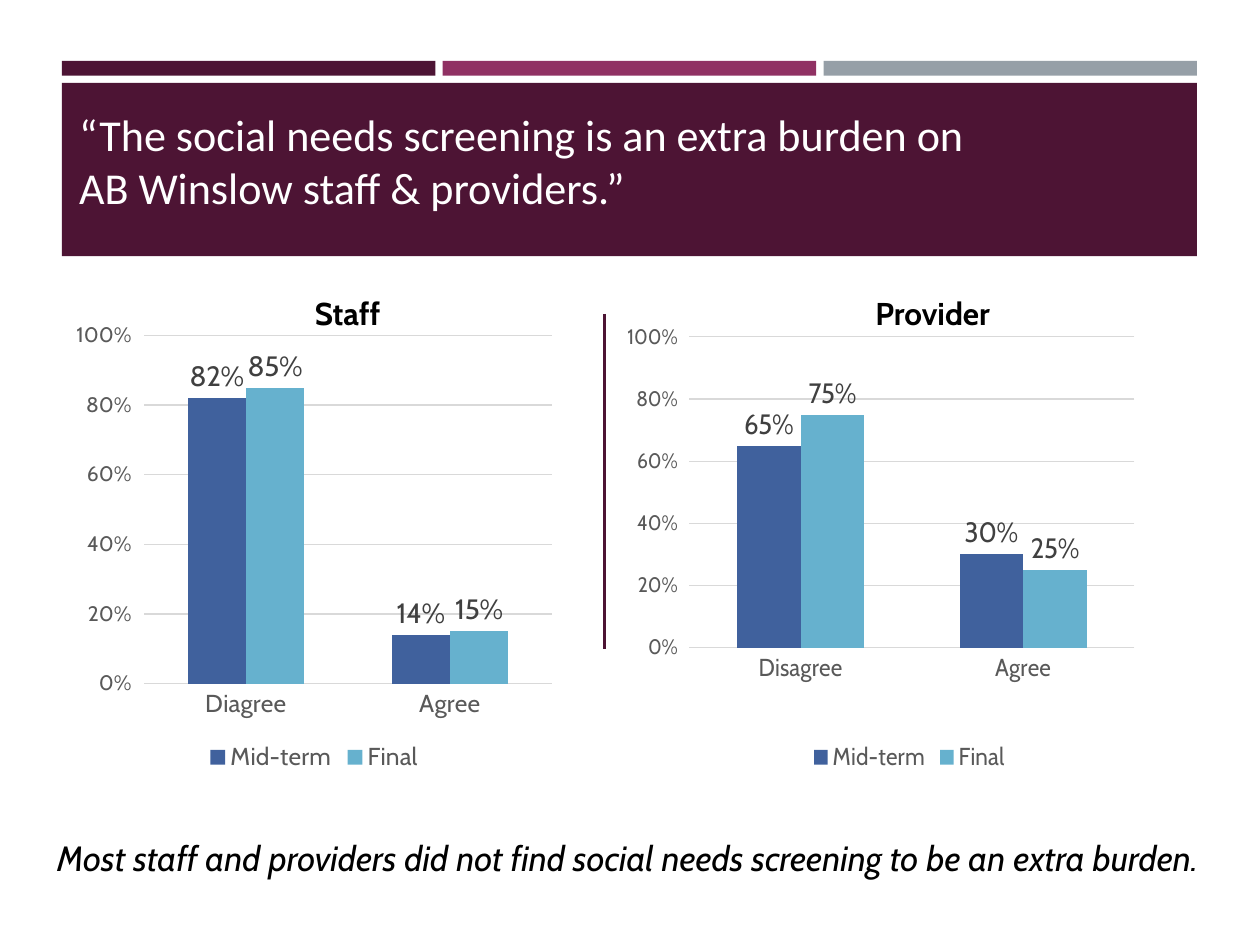
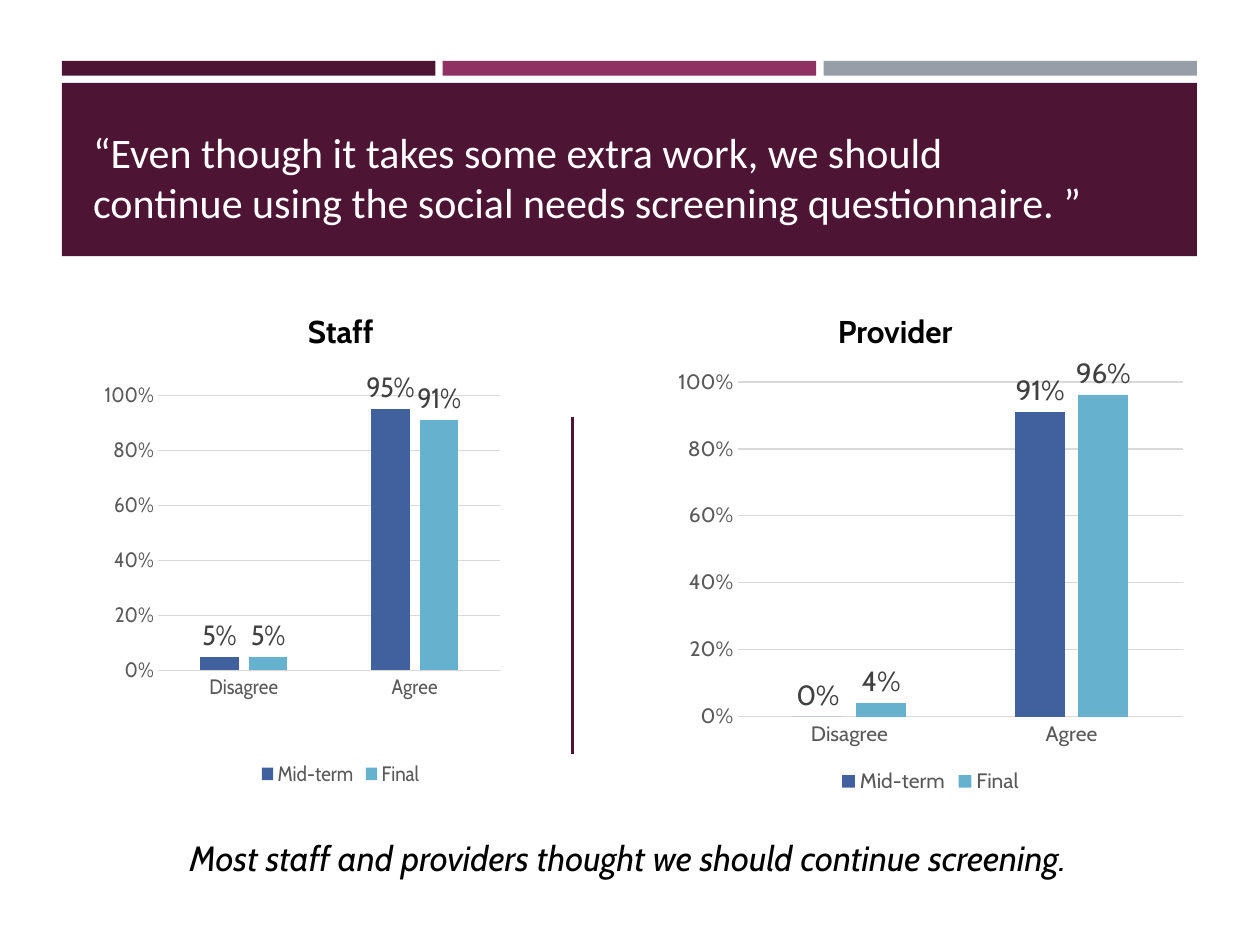
from pptx import Presentation
from pptx.chart.data import CategoryChartData
from pptx.dml.color import RGBColor
from pptx.enum.chart import XL_CHART_TYPE as ChartType
from pptx.enum.chart import XL_LABEL_POSITION as LabelPos
from pptx.enum.chart import XL_LEGEND_POSITION as LegendPos
from pptx.enum.chart import XL_TICK_MARK as Tick
from pptx.enum.shapes import MSO_CONNECTOR as Connector
from pptx.enum.shapes import MSO_SHAPE as Shape
from pptx.enum.text import MSO_ANCHOR as Anchor
from pptx.enum.text import MSO_AUTO_SIZE as AutoSize
from pptx.enum.text import PP_ALIGN as Align
from pptx.oxml.ns import qn
from pptx.util import Pt
from lxml.etree import SubElement

COLORS = {
    "plum": "4D1434", "berry": "903163", "steel": "969FA7",
    "white": "FFFFFF", "black": "000000",
    "midterm": "40619D", "final": "66B1CE",
    "axis": "595959", "label": "404040", "grid": "D9D9D9",
}
BODY_FONT = "Cabin"
TITLE_FONT = "Calibri"

# Header band geometry, in points
BAND_LEFT, BAND_WIDTH, BAND_GAP = 35.4, 648.6, 4.2

# Chart looks, one per slide
OPEN_STYLE = {"category_size": 14, "legend_size": 14, "gap": 150, "overlap": 0,
              "ticks": Tick.OUTSIDE, "baseline": False}
SPACED_STYLE = {"category_size": 12, "legend_size": 12, "gap": 219, "overlap": -27,
                "ticks": Tick.NONE, "baseline": True}


def color(name):
    return RGBColor.from_string(COLORS[name])


def box(left, top, width, height):
    return Pt(left), Pt(top), Pt(width), Pt(height)


def set_font(font, size, color_name, name=BODY_FONT, bold=False, italic=False):
    font.name, font.size = name, Pt(size)
    font.bold, font.italic = bold, italic
    font.color.rgb = color(color_name)


def format_text(frame, align, **font):
    for paragraph in frame.paragraphs:
        paragraph.alignment = align
        for run in paragraph.runs:
            set_font(run.font, **font)


def add_bar(slide, area, color_name):
    bar = slide.shapes.add_shape(Shape.RECTANGLE, *box(*area))
    bar.shadow.inherit = False
    bar.fill.solid()
    bar.fill.fore_color.rgb = color(color_name)
    bar.line.fill.background()
    return bar


def add_header(slide, title, area, size, anchor, insets):
    """Three thin bars, the title band and the title on top of it."""
    bar_width = (BAND_WIDTH - 2 * BAND_GAP) / 3
    for i, name in enumerate(("plum", "berry", "steel")):
        left = BAND_LEFT + i * (bar_width + BAND_GAP)
        add_bar(slide, (left, 34.8, bar_width, 8.4), name)
    band = add_bar(slide, (BAND_LEFT, 47.4, BAND_WIDTH, 99), "plum")

    heading = slide.shapes.title
    heading.left, heading.top, heading.width, heading.height = box(*area)
    band.element.addnext(heading.element)
    frame = heading.text_frame
    frame.text = title
    frame.word_wrap = True
    frame.auto_size = AutoSize.NONE
    frame.vertical_anchor = anchor
    frame.margin_top, frame.margin_bottom = map(Pt, insets)
    format_text(frame, Align.LEFT, size=size, color_name="white", name=TITLE_FONT)


def add_text(slide, text, area, align=Align.CENTER, **font):
    textbox = slide.shapes.add_textbox(*box(*area))
    frame = textbox.text_frame
    frame.word_wrap = True
    frame.text = text
    format_text(frame, align, color_name="black", **font)


def add_group_label(slide, text, area, align=Align.CENTER):
    add_text(slide, text, area, align, size=18, bold=True)


def add_conclusion(slide, text):
    add_text(slide, text, (13, 474.5, 692, 31.5), size=20, italic=True)


def add_divider(slide, x, top, bottom):
    divider = slide.shapes.add_connector(Connector.STRAIGHT, Pt(x), Pt(top), Pt(x), Pt(bottom))
    divider.line.color.rgb = color("plum")
    divider.line.width = Pt(1.75)
    SubElement(divider.element.spPr, qn("a:effectLst"))


def set_plot_layout(chart, layout):
    """Pin the inner plot area, as fractions of the chart."""
    plot_area = chart.element.find(".//" + qn("c:plotArea"))
    for automatic in plot_area.findall(qn("c:layout")):
        plot_area.remove(automatic)
    holder = SubElement(plot_area, qn("c:layout"))
    plot_area.insert(0, holder)
    manual = SubElement(holder, qn("c:manualLayout"))
    settings = [("layoutTarget", "inner"), ("xMode", "edge"), ("yMode", "edge")]
    settings += zip("xywh", layout)
    for tag, value in settings:
        SubElement(manual, qn("c:" + tag)).set("val", str(value))


def format_axes(chart, style):
    categories, values = chart.category_axis, chart.value_axis
    categories.major_tick_mark = Tick.NONE
    set_font(categories.tick_labels.font, style["category_size"], "axis")
    if style["baseline"]:
        categories.format.line.color.rgb = color("grid")
        categories.format.line.width = Pt(0.75)
    else:
        categories.format.line.fill.background()

    values.minimum_scale, values.maximum_scale, values.major_unit = 0, 1, 0.2
    values.major_tick_mark = style["ticks"]
    values.format.line.fill.background()
    values.tick_labels.number_format = "0%"
    values.tick_labels.number_format_is_linked = False
    set_font(values.tick_labels.font, 12, "axis")
    values.has_major_gridlines = True
    values.major_gridlines.format.line.color.rgb = color("grid")
    values.major_gridlines.format.line.width = Pt(0.75)


def add_survey_chart(slide, area, categories, midterm, final, style, layout=None):
    answers = CategoryChartData(number_format="0%")
    answers.categories = categories
    answers.add_series("Mid-term", midterm)
    answers.add_series("Final", final)
    chart = slide.shapes.add_chart(ChartType.COLUMN_CLUSTERED, *box(*area), answers).chart
    chart.has_title = False
    set_font(chart.font, 10, "black")

    # Legend
    chart.has_legend = True
    chart.legend.position = LegendPos.BOTTOM
    chart.legend.include_in_layout = False
    set_font(chart.legend.font, style["legend_size"], "axis")

    # Columns and their labels
    plot = chart.plots[0]
    plot.vary_by_categories = False
    plot.gap_width, plot.overlap = style["gap"], style["overlap"]
    for series, name in zip(plot.series, ("midterm", "final")):
        series.format.fill.solid()
        series.format.fill.fore_color.rgb = color(name)
        labels = series.data_labels
        labels.show_value = True
        labels.position = LabelPos.OUTSIDE_END
        labels.number_format = "0%"
        labels.number_format_is_linked = False
        set_font(labels.font, 16, "label")

    format_axes(chart, style)
    if layout:
        set_plot_layout(chart, layout)


def build_burden_slide(slide):
    add_header(slide, "“The social needs screening is an extra burden on \vAB Winslow staff & providers.”",
               (38, 64, 629, 85), 25.2, Anchor.MIDDLE, (0, 30))
    add_survey_chart(slide, (38, 179.3, 283, 265), ("Diagree", "Agree"),
                     (0.82, 0.14), (0.85, 0.15), OPEN_STYLE)
    add_survey_chart(slide, (358.5, 179.3, 298, 265), ("Disagree", "Agree"),
                     (0.65, 0.3), (0.75, 0.25), OPEN_STYLE, (0.04, 0.05, 0.93, 0.67))
    add_group_label(slide, "Staff", (172.8, 164.2, 65.5, 29), Align.LEFT)
    add_group_label(slide, "Provider", (493.2, 164.2, 91.5, 29), Align.LEFT)
    add_divider(slide, 345.6, 179.3, 370.8)
    add_conclusion(slide, "Most staff and providers did not find social needs screening to be an extra burden.")


def build_continue_slide(slide):
    add_header(slide, "“Even though it takes some extra work, we should\n"
               "continue using the social needs screening questionnaire. ”",
               (46, 68.4, 638, 65.5), 24, Anchor.TOP, (3.6, 3.6))
    add_survey_chart(slide, (59.8, 212.4, 243.4, 239.8), ("Disagree", "Agree"),
                     (0.05, 0.95), (0.05, 0.91), SPACED_STYLE, (0.02, 0.05, 0.9, 0.66))
    add_survey_chart(slide, (381.6, 204.5, 300.2, 252), ("Disagree", "Agree"),
                     (0, 0.91), (0.04, 0.96), SPACED_STYLE)
    add_group_label(slide, "Staff", (149, 175, 91.5, 29))
    add_group_label(slide, "Provider", (465.8, 175, 91.5, 29))
    add_divider(slide, 326.9, 238.3, 430.6)
    add_conclusion(slide, "Most staff and providers thought we should continue screening.")


def main():
    deck = Presentation()
    deck.slide_width, deck.slide_height = Pt(720), Pt(540)
    title_only = deck.slide_layouts[5]
    for build in (build_burden_slide, build_continue_slide):
        build(deck.slides.add_slide(title_only))
    deck.save("out.pptx")


if __name__ == "__main__":
    main()
